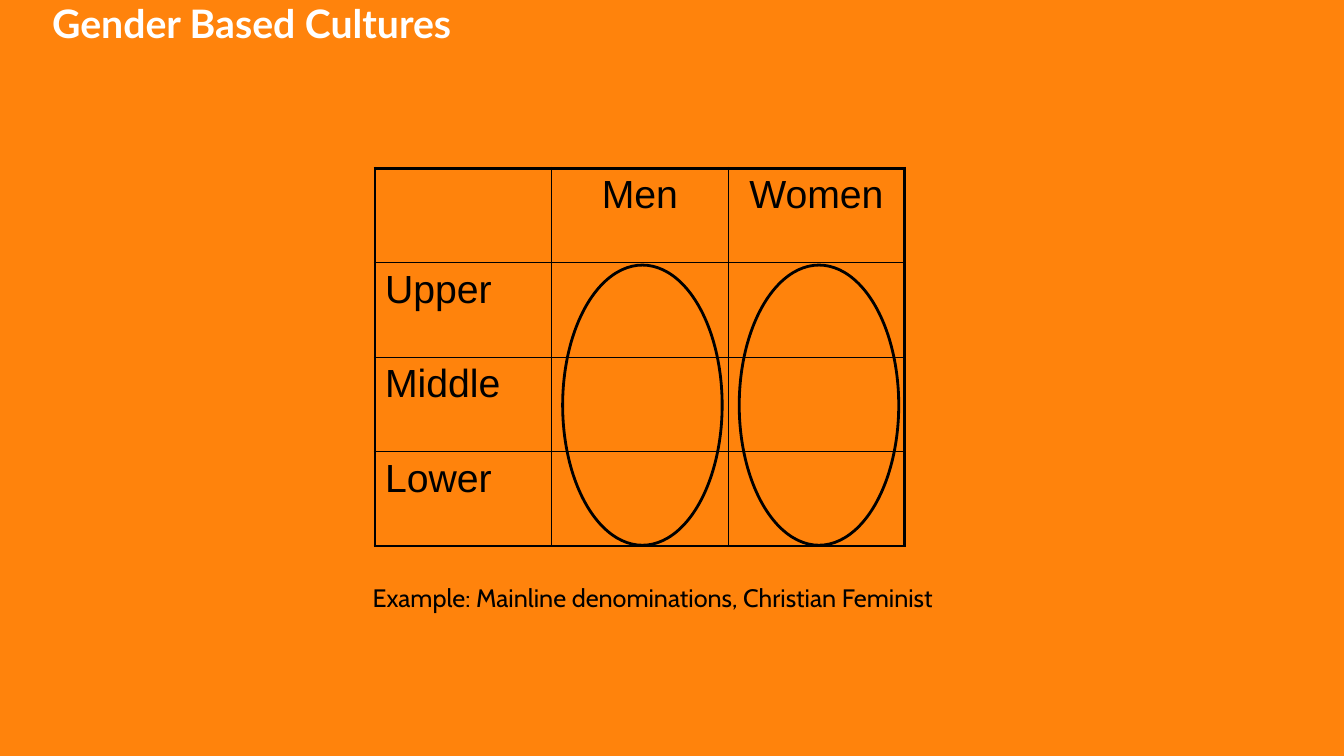
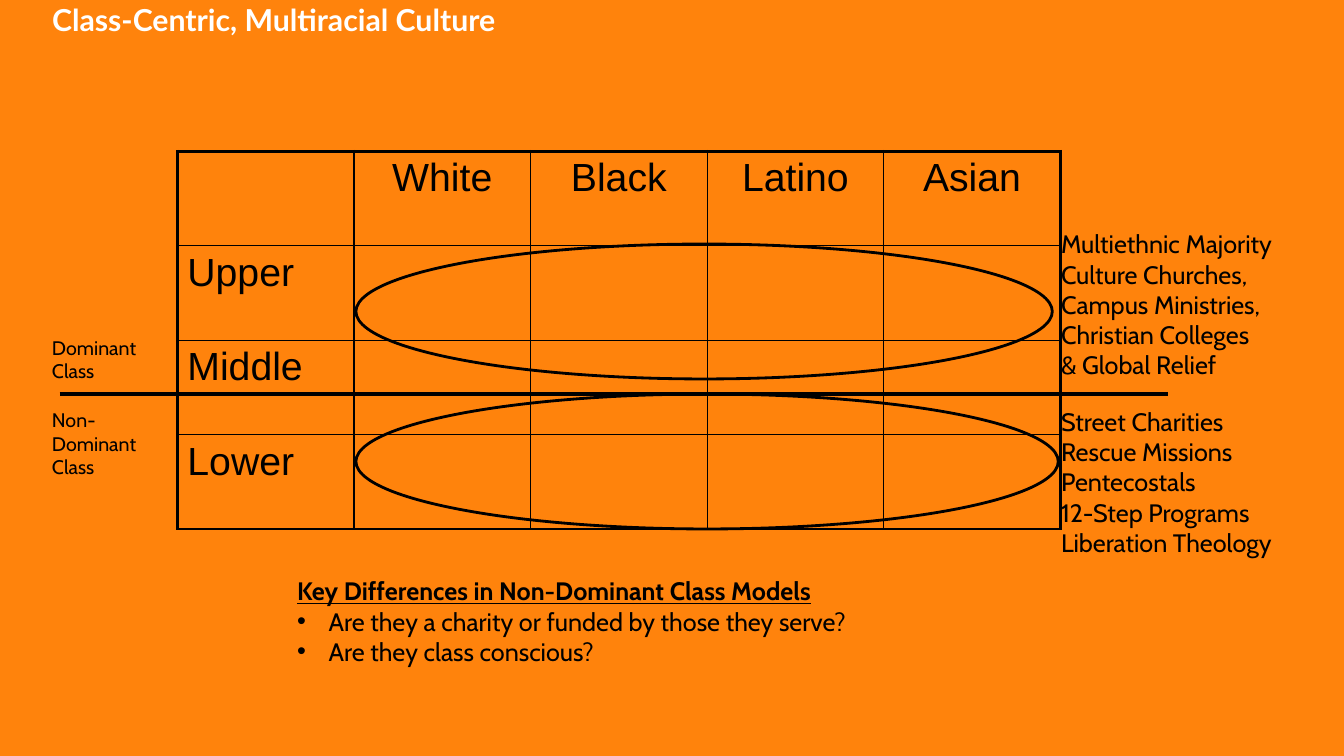
import pptx
import pptx.dml.color
import pptx.enum.shapes
import pptx.enum.text
import pptx.oxml.ns
import pptx.util
from lxml import etree

Cm, Pt = pptx.util.Cm, pptx.util.Pt
ALIGN = pptx.enum.text.PP_ALIGN

HUES = {"back": "FF830C", "ink": "000000", "title": "FFFFFF"}
RANKS = ["Upper", "Middle", "Lower"]
COL, ROW = 4.45, 2.38
THIN, THICK = 1, 2.25


def hue(name):
    return pptx.dml.color.RGBColor.from_string(HUES[name])


def sub(node, tag, **attrs):
    return etree.SubElement(node, pptx.oxml.ns.qn(tag), attrs)


def write(frame, lines, size=18, face="Cabin", color="ink", bold=False,
          align=ALIGN.LEFT, space=None, bullets=False, under=False):
    """Fill a text frame; with bullets, the first line is a bold heading."""
    for i, line in enumerate(lines):
        para = frame.paragraphs[0] if i == 0 else frame.add_paragraph()
        para.text = line
        para.alignment = align
        para.line_spacing = space
        if bullets and i:
            props = para._p.get_or_add_pPr()
            props.set("marL", str(Cm(0.79)))
            props.set("indent", str(-Cm(0.79)))
            sub(props, "a:buFont", typeface="Arial")
            sub(props, "a:buChar", char="•")
        head = bullets and i == 0
        for run in para.runs:
            font = run.font
            font.size, font.name = Pt(size), face
            font.bold = bold or head
            font.underline = under or head
            font.color.rgb = hue(color)


def note(slide, box, lines, **style):
    frame = slide.shapes.add_textbox(*map(Cm, box)).text_frame
    frame.word_wrap = True
    write(frame, lines, **style)


def start(deck, title, size):
    """Add a slide with its title along the top edge."""
    slide = deck.slides.add_slide(deck.slide_layouts[5])
    head = slide.shapes.title
    head.left, head.top, head.width, head.height = map(Cm, (1.06, 0, 30.02, 1.02))
    frame = head.text_frame
    frame.auto_size = pptx.enum.text.MSO_AUTO_SIZE.NONE
    frame.vertical_anchor = pptx.enum.text.MSO_ANCHOR.TOP
    write(frame, [title], size=size, face="Lato", color="title", bold=True, space=0.9)
    return slide


def edge(cell, sides):
    props = cell._tc.get_or_add_tcPr()
    for side, width in sides.items():
        line = sub(props, "a:ln" + side, w=str(Pt(width)))
        sub(sub(line, "a:solidFill"), "a:srgbClr", val=HUES["ink"])


def grid(slide, x, y, heads):
    """Draw the class table: thick outer frame, thin inner lines."""
    rows, cols = len(RANKS) + 1, len(heads) + 1
    table = slide.shapes.add_table(
        rows, cols, Cm(x), Cm(y), Cm(COL * cols), Cm(ROW * rows)).table
    table.first_row = table.horz_banding = False
    for col in table.columns:
        col.width = Cm(COL)
    for r in range(rows):
        table.rows[r].height = Cm(ROW)
        for c in range(cols):
            cell = table.cell(r, c)
            ends = {"L": c == 0, "R": c == cols - 1, "T": r == 0, "B": r == rows - 1}
            edge(cell, {side: THICK if end else THIN for side, end in ends.items()})
            cell.fill.background()
            if r == 0 and c:
                write(cell.text_frame, [heads[c - 1]], size=28, face="Arial",
                      align=ALIGN.CENTER)
            elif r and c == 0:
                write(cell.text_frame, [RANKS[r - 1]], size=28, face="Arial")


def ring(slide, *box):
    oval = slide.shapes.add_shape(pptx.enum.shapes.MSO_SHAPE.OVAL, *map(Cm, box))
    oval.shadow.inherit = False
    oval.fill.background()
    oval.line.color.rgb = hue("ink")
    oval.line.width = Pt(2)


def rule(slide, x, y, width):
    line = slide.shapes.add_connector(
        pptx.enum.shapes.MSO_CONNECTOR.STRAIGHT, Cm(x), Cm(y), Cm(x + width), Cm(y))
    line.line.color.rgb = hue("ink")
    line.line.width = Pt(3)
    sub(line._element.spPr, "a:effectLst")


def gender(deck):
    slide = start(deck, "Gender Based Cultures", 28)
    x, y = 9.45, 4.24
    heads = ["Men", "Women"]
    grid(slide, x, y, heads)
    for i in range(len(heads)):
        ring(slide, x + COL * (i + 1) + 0.28, y + ROW + 0.06, 4.02, 7.06)
    note(slide, (x - 0.31, y + 10.32, 15.57, 1.02),
         ["Example: Mainline denominations, Christian Feminist"])


def race(deck):
    slide = start(deck, "Class-Centric, Multiracial Culture", 21.6)
    x, y = 4.47, 3.81
    heads = ["White", "Black", "Latino", "Asian"]
    grid(slide, x, y, heads)
    split, right = y + 6.12, x + 22.02
    ring(slide, x + COL + 0.05, split, 17.7, 3.4)
    ring(slide, x + COL + 0.05, split - 3.78, 17.55, 3.4)
    note(slide, (right, split - 4.29, 6.4, 4.11),
         ["Multiethnic Majority", "Culture Churches,", "Campus Ministries,",
          "Christian Colleges", "& Global Relief"])
    note(slide, (right, split + 0.18, 6.4, 4.11),
         ["Street Charities", "Rescue Missions", "Pentecostals",
          "12-Step Programs", "Liberation Theology"])
    note(slide, (x + 2.77, y + 10.57, 21.62, 2.57),
         ["Key Differences in Non-Dominant Class Models",
          "Are they a charity or funded by those they serve?",
          "Are they class conscious?"], bullets=True)
    rule(slide, 1.5, split, 27.94)
    note(slide, (1.06, split - 1.6, 3, 1.45), ["Dominant\nClass"], size=14)
    note(slide, (1.06, split + 0.23, 3, 2.06), ["Non-\nDominant\nClass"], size=14)


def main():
    deck = pptx.Presentation()
    deck.slide_width, deck.slide_height = Cm(33.87), Cm(19.05)
    fill = deck.slide_master.background.fill
    fill.solid()
    fill.fore_color.rgb = hue("back")
    gender(deck)
    race(deck)
    deck.save("out.pptx")


if __name__ == "__main__":
    main()
